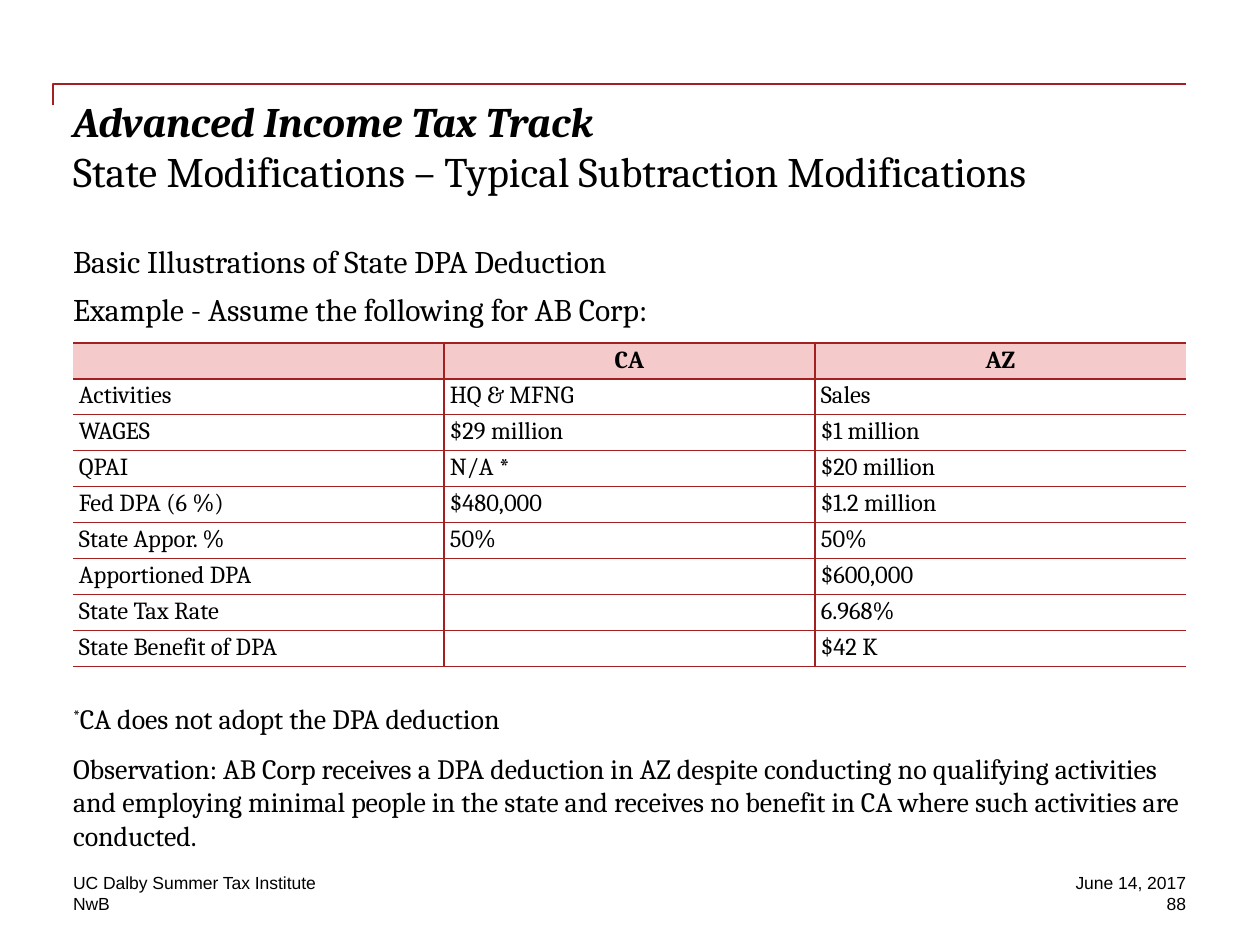
from lxml import etree
from pptx import Presentation
from pptx.dml.color import RGBColor
from pptx.enum.text import MSO_ANCHOR, MSO_AUTO_SIZE, PP_ALIGN
from pptx.oxml.ns import qn
from pptx.util import Emu, Pt

TOP, BOTTOM = MSO_ANCHOR.TOP, MSO_ANCHOR.BOTTOM
LEFT, CENTER, RIGHT = PP_ALIGN.LEFT, PP_ALIGN.CENTER, PP_ALIGN.RIGHT
NO_FIT = MSO_AUTO_SIZE.NONE

RULE_RED, HEADER_PINK, WHITE, BLACK = "A32020", "F5CACA", "FFFFFF", "000000"
BORDER_PT = 0.75

TITLE_LINES = [
    ("Advanced Income Tax Track", {"bold": True, "italic": True}),
    ("State Modifications – Typical Subtraction Modifications",
     {"bold": False, "italic": False}),
]
INTRO = [
    "Basic Illustrations of State DPA Deduction",
    "Example - Assume the following for AB Corp:",
]
DPA_ROWS = [
    ("", "CA", "AZ"),
    ("Activities", "HQ & MFNG", "Sales"),
    ("WAGES", "$29 million", "$1 million"),
    ("QPAI", "N/A *", "$20 million"),
    ("Fed DPA (6 %)", "$480,000", "$1.2 million"),
    ("State Appor. %", "50%", "50%"),
    ("Apportioned DPA", "", "$600,000"),
    ("State Tax Rate", "", "6.968%"),
    ("State Benefit of DPA", "", "$42 K"),
]
NOTE_MARK = "*"
NOTES = [
    "CA does not adopt the DPA deduction",
    "Observation: AB Corp receives a DPA deduction in AZ despite conducting "
    "no qualifying activities and employing minimal people in the state and "
    "receives no benefit in CA where such activities are conducted.",
]

MARGIN_X, CONTENT_W = 73, 1113
RIGHT_EDGE = MARGIN_X + CONTENT_W
FOOTER_W, FOOTER_H, DATE_W = 725, 21, 210
DATE_X = RIGHT_EDGE - DATE_W
FOOTERS = [
    ("UC Dalby Summer Tax Institute", (MARGIN_X, 872, FOOTER_W, FOOTER_H), LEFT, BOTTOM),
    ("NwB", (MARGIN_X, 893, FOOTER_W, FOOTER_H), LEFT, TOP),
    ("June 14, 2017", (DATE_X, 872, DATE_W, FOOTER_H), RIGHT, TOP),
    ("88", (DATE_X, 893, DATE_W, FOOTER_H), RIGHT, TOP),
]
TABLE_TOP, ROW_H = 343, 36
CELL_PAD_X, CELL_PAD_Y = 6, 3
CORNER_RULE = [(53, 105), (53, 84), (RIGHT_EDGE, 84)]


def px(length):
    return Emu(length * 914400 // 126)


def color(hex_value):
    return RGBColor.from_string(hex_value)


def apply(target, values):
    for name, value in values.items():
        setattr(target, name, value)


def style(run, size, family="Cambria", **extra):
    apply(run.font, {"size": Pt(size), "name": family, **extra})
    run.font.color.rgb = color(BLACK)


def place(shape, box):
    apply(shape, dict(zip(("left", "top", "width", "height"), map(px, box))))


def prepare(frame, anchor=TOP):
    apply(frame, {"margin_left": 0, "margin_right": 0, "margin_top": 0,
                  "margin_bottom": 0, "word_wrap": True,
                  "auto_size": NO_FIT, "vertical_anchor": anchor})


def add_text(slide, box, lines, size, after=0, family="Cambria", align=LEFT, anchor=TOP):
    frame = slide.shapes.add_textbox(*map(px, box)).text_frame
    prepare(frame, anchor)
    for index, line in enumerate(lines):
        paragraph = frame.add_paragraph() if index else frame.paragraphs[0]
        apply(paragraph, {"alignment": align, "space_after": Pt(after)})
        for part in line if isinstance(line, list) else [line]:
            run = paragraph.add_run()
            run.text = part
            style(run, size, family)
    return frame


def add_title(slide):
    title = slide.shapes.title
    place(title, (MARGIN_X, 95, CONTENT_W, 126))
    prepare(title.text_frame)
    paragraph = title.text_frame.paragraphs[0]
    paragraph.alignment = LEFT
    for index, (words, emphasis) in enumerate(TITLE_LINES):
        if index:
            paragraph.add_line_break()
        run = paragraph.add_run()
        run.text = words
        style(run, 24, **emphasis)


def add_corner_rule(slide):
    builder = slide.shapes.build_freeform(*map(px, CORNER_RULE[0]))
    builder.add_line_segments([tuple(map(px, point)) for point in CORNER_RULE[1:]], close=False)
    rule = builder.convert_to_shape()
    rule.shadow.inherit = False
    rule.fill.background()
    rule.line.color.rgb = color(RULE_RED)
    rule.line.width = Pt(1)


def set_borders(cell, visible):
    properties = cell._tc.get_or_add_tcPr()
    for index, side in enumerate("LRTB"):
        border = etree.Element(qn(f"a:ln{side}"), w=str(Pt(BORDER_PT)))
        if side in visible:
            fill = etree.SubElement(border, qn("a:solidFill"))
            etree.SubElement(fill, qn("a:srgbClr"), val=RULE_RED)
        else:
            etree.SubElement(border, qn("a:noFill"))
        properties.insert(index, border)


def add_dpa_table(slide):
    row_count, column_count = len(DPA_ROWS), len(DPA_ROWS[0])
    table = slide.shapes.add_table(
        row_count, column_count, px(MARGIN_X), px(TABLE_TOP),
        px(CONTENT_W), px(ROW_H * row_count)).table
    apply(table, {"first_row": False, "horz_banding": False})
    for row, values in enumerate(DPA_ROWS):
        is_header = row == 0
        for column, value in enumerate(values):
            cell = table.cell(row, column)
            apply(cell, {"margin_left": px(CELL_PAD_X), "margin_right": px(CELL_PAD_X),
                         "margin_top": px(CELL_PAD_Y), "margin_bottom": px(CELL_PAD_Y)})
            cell.fill.solid()
            cell.fill.fore_color.rgb = color(HEADER_PINK if is_header else WHITE)
            set_borders(cell, "TB" + "L" * (column > 0) + "R" * (column < column_count - 1))
            paragraph = cell.text_frame.paragraphs[0]
            apply(paragraph, {"alignment": CENTER if is_header else LEFT,
                              "space_after": Pt(3)})
            if value:
                run = paragraph.add_run()
                run.text = value
                style(run, 14, bold=is_header)
            else:
                etree.SubElement(paragraph._p, qn("a:endParaRPr"), sz="1400")


def main():
    deck = Presentation()
    apply(deck, {"slide_width": px(1260), "slide_height": px(945)})
    slide = deck.slides.add_slide(deck.slide_layouts[5])
    add_corner_rule(slide)
    add_title(slide)
    add_text(slide, (MARGIN_X, 242, CONTENT_W, 95), INTRO, 18, after=6)
    add_dpa_table(slide)
    notes = add_text(slide, (MARGIN_X, 702, CONTENT_W, 96),
                     [[NOTE_MARK, NOTES[0]], NOTES[1]], 16, after=9)
    notes.paragraphs[0].runs[0]._r.get_or_add_rPr().set("baseline", "30000")
    for words, box, align, anchor in FOOTERS:
        add_text(slide, box, [words], 10, family="Arial", align=align, anchor=anchor)
    deck.save("out.pptx")


if __name__ == "__main__":
    main()
